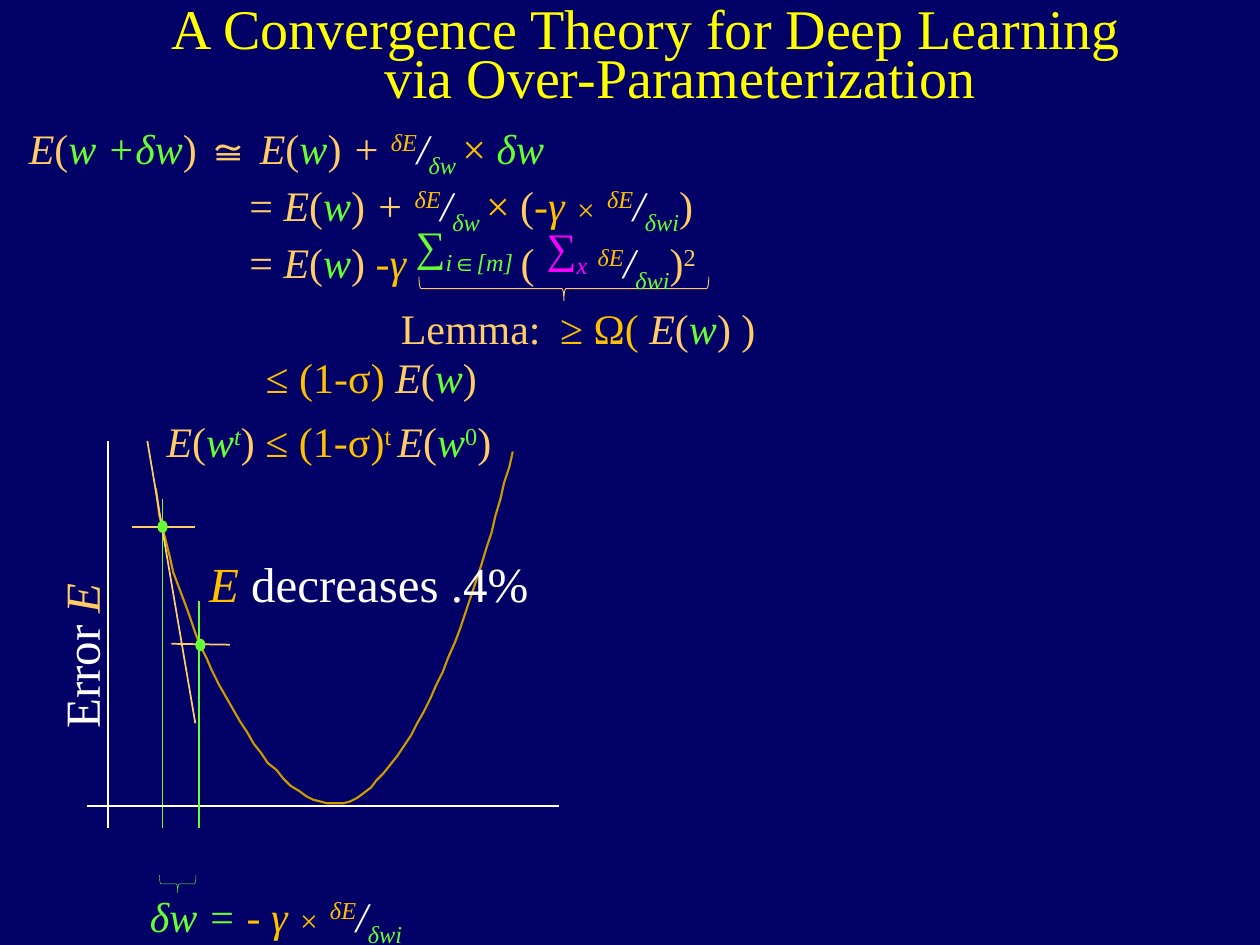
"""Builds the slide on convergence of over-parameterized deep learning."""
from lxml.etree import SubElement
from pptx import Presentation
from pptx.dml.color import RGBColor
from pptx.enum.shapes import MSO_CONNECTOR, MSO_SHAPE
from pptx.enum.text import MSO_ANCHOR, PP_ALIGN
from pptx.oxml.ns import qn
from pptx.util import Pt

COLORS = {"y": "FFFF00", "w": "FFFFFF", "s": "FFCC66", "a": "FFC000",
          "g": "66FF33", "m": "FF00FF"}
SAND, GREEN, WHITE, GOLD = "FFCC66", "66FF33", "FFFFFF", "CC9900"

# Run styles: colour letter, then i italic, ^ superscript, _ subscript, ~ small
E_W = [("E", "si"), ("(", "s"), ("w", "gi"), (")", "s")]
SLOPE = [("δE", "ai^"), ("/", "wi")]
SLOPE_W = SLOPE + [("δw ", "gi_"), ("× ", "a")]
SLOPE_WI = SLOPE + [("δwi", "gi_")]
STEP = [("×", "ai~"), (" ", "ai")] + SLOPE_WI
PLUS = [(" ", "s"), ("+ ", "si")]

EXPANSION = [
    [("E", "si"), ("(", "s"), ("w +δw", "gi"), (") ≅ ", "s")] + E_W + PLUS
    + SLOPE_W + [("δw", "gi")],
    [("\t= ", "s")] + E_W + PLUS + SLOPE_W + [("(", "s"), ("-γ ", "ai")]
    + STEP + [(")", "s")],
    [("\t= ", "s")] + E_W + [(" ", "s"), ("-γ", "ai"), ("\t(\t", "s")]
    + SLOPE_WI + [(")", "s"), ("2", "s^")],
]
LEMMA = [(" Lemma:\t", "s"), ("≥ Ω( ", "a")] + E_W + [(" )", "s")]
BOUND = [("≤ (1-σ) ", "a")] + E_W
RATE = [(" ", "s"), ("E", "si"), ("(", "s"), ("w", "gi"), ("t", "gi^"),
        (") ", "s"), ("≤ (1-σ)", "a"), ("t ", "a^"), ("E", "si"), ("(", "s"),
        ("w", "gi"), ("0", "g^"), (")", "s")]
UPDATE = [("δw = ", "gi"), ("- γ ", "ai")] + STEP

TITLE = dict(size=32, align=PP_ALIGN.CENTER, anchor=MSO_ANCHOR.MIDDLE)
LABEL = dict(size=28, inset=21.6)
TEXTS = [
    ((63.4, -29.5, 612, 90),
     [[("A Convergence Theory for Deep Learning", "y")]], TITLE),
    ((154, 31, 469.4, 25.2), [[("via Over-Parameterization", "y")]], TITLE),
    ((-20.9, 350.6, 133.9, 41), [[("Error ", "w"), ("E", "si")]],
     dict(LABEL, rotation=270)),
    ((97.9, 312.5, 256.3, 41), [[("E", "ai"), (" decreases .4%", "w")]], LABEL),
    ((78.5, 505.4, 171.4, 36), [UPDATE], {}),
    ((216, 169.2, 372.2, 36), [LEMMA], dict(tabs=[97])),
    ((144.7, 197.3, 144.7, 36), [BOUND], {}),
    ((82.1, 234, 340.6, 36), [RATE], {}),
    ((9.4, 66.2, 710.6, 94.3), EXPANSION, dict(tabs=[126, 281, 325])),
    ((230.4, 121.7, 85, 36), [[("∑", "g"), ("i∈[m]", "gi_")]], {}),
    ((305.3, 123.1, 85, 36), [[("∑", "m"), ("x", "mi_")]], {}),
]

LINES = [
    ((111.6, 301), (75.6, 301), SAND),
    ((92.9, 473), (92.9, 285), GREEN),
    ((61.9, 252), (61.9, 473), WHITE),
    ((319.7, 460.6), (49.7, 460.6), WHITE),
    ((111.6, 413.3), (84.2, 252), SAND),
    ((131.4, 368.4), (97.9, 367.9), SAND),
    ((113.8, 473), (113.8, 343.4), GREEN),
]
DOTS = [(90, 297.4), (111.6, 365)]
BRACES = [((96.5, 494.6, 10.1, 20.9), GREEN, 0.25),
          ((315.4, 82.1, 13.7, 165.6), SAND, 0.5)]
ERROR_CURVE = [
    [(88.6, 278.6), (98.6, 354.2), (151.2, 461.5), (191.5, 459.4)],
    [(191.5, 459.4), (231.8, 457.2), (271.4, 348.5), (293, 257.8)],
]
STEPS = 30


def rgb(value):
    """Turns a hex string into a colour."""
    return RGBColor.from_string(value)


def add_text(s, box, paragraphs, size=24, align=PP_ALIGN.LEFT,
             anchor=MSO_ANCHOR.TOP, inset=7.2, rotation=0, tabs=()):
    """Adds a text box made of styled runs."""
    sp = s.shapes.add_textbox(*map(Pt, box))
    sp.rotation = rotation
    tf = sp.text_frame
    tf.word_wrap = True
    tf.vertical_anchor = anchor
    tf.margin_left = tf.margin_right = Pt(inset)
    for n, runs in enumerate(paragraphs):
        p = tf.add_paragraph() if n else tf.paragraphs[0]
        p.alignment = align
        if tabs:
            stops = SubElement(p._p.get_or_add_pPr(), qn("a:tabLst"))
            for tab in tabs:
                SubElement(stops, qn("a:tab"), pos=str(Pt(tab)), algn="l")
        for text, style in runs:
            r = p.add_run()
            r.text = text
            r.font.name = "Times New Roman"
            r.font.size = Pt(18 if "~" in style else size)
            r.font.italic = "i" in style
            r.font.color.rgb = rgb(COLORS[style[0]])
            for mark, shift in (("^", "30000"), ("_", "-25000")):
                if mark in style:
                    r._r.get_or_add_rPr().set("baseline", shift)


def outline(sp, color, width):
    """Gives a shape a plain line, no fill and no shadow."""
    sp.shadow.inherit = False
    sp.fill.background()
    sp.line.color.rgb = rgb(color)
    sp.line.width = Pt(width)


def add_line(s, start, end, color):
    """Adds a straight line without shadow."""
    line = s.shapes.add_connector(MSO_CONNECTOR.STRAIGHT, *map(Pt, start + end))
    line.line.color.rgb = rgb(color)
    line.line.width = Pt(1)
    SubElement(line._element.spPr, qn("a:effectLst"))


def bezier(points, t):
    """Returns the point at t on a cubic curve."""
    weights = ((1 - t) ** 3, 3 * t * (1 - t) ** 2, 3 * t * t * (1 - t), t ** 3)
    return tuple(sum(w * pt[axis] for w, pt in zip(weights, points))
                 for axis in (0, 1))


def add_curve(s, segments, color, width):
    """Adds an open smooth outline."""
    builder = s.shapes.build_freeform(*segments[0][0], scale=Pt(1))
    builder.add_line_segments(
        [bezier(seg, n / STEPS) for seg in segments for n in range(1, STEPS + 1)],
        close=False)
    outline(builder.convert_to_shape(), color, width)


def main():
    """Builds and saves the slide."""
    prs = Presentation()
    prs.slide_width, prs.slide_height = Pt(720), Pt(540)
    s = prs.slides.add_slide(prs.slide_layouts[6])
    s.background.fill.solid()
    s.background.fill.fore_color.rgb = rgb("000066")
    add_curve(s, ERROR_CURVE, GOLD, 1.25)
    for line in LINES:
        add_line(s, *line)
    for x, y in DOTS:
        dot = s.shapes.add_shape(MSO_SHAPE.OVAL, Pt(x), Pt(y), Pt(5.8), Pt(7.2))
        dot.shadow.inherit = False
        dot.fill.solid()
        dot.fill.fore_color.rgb = rgb(GREEN)
        dot.line.fill.background()
    for box, color, width in BRACES:
        brace = s.shapes.add_shape(MSO_SHAPE.LEFT_BRACE, *map(Pt, box))
        brace.rotation = 270
        outline(brace, color, width)
    for box, paragraphs, look in TEXTS:
        add_text(s, box, paragraphs, **look)
    prs.save("out.pptx")


if __name__ == "__main__":
    main()
